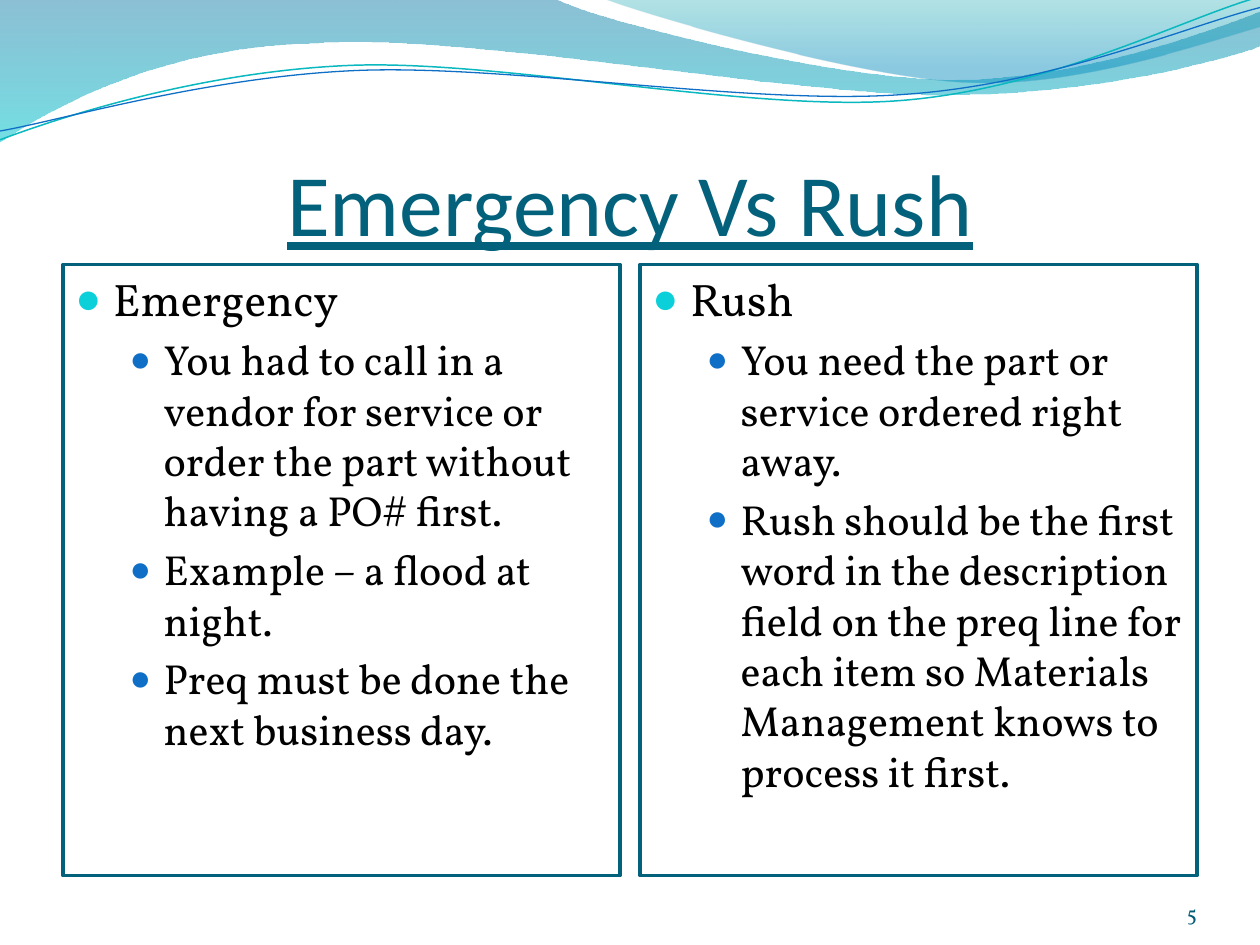
from lxml import etree
from pptx import Presentation
from pptx.dml.color import RGBColor
from pptx.enum.shapes import MSO_SHAPE
from pptx.enum.text import MSO_ANCHOR, PP_ALIGN
from pptx.oxml.ns import qn
from pptx.util import Inches, Pt

RECTANGLE = MSO_SHAPE.RECTANGLE
TOP, BOTTOM = MSO_ANCHOR.TOP, MSO_ANCHOR.BOTTOM
LEFT, CENTER, RIGHT = PP_ALIGN.LEFT, PP_ALIGN.CENTER, PP_ALIGN.RIGHT

DARK_TEAL = RGBColor(0x04, 0x61, 0x7B)
NUMBER_TEAL = RGBColor(0x04, 0x5D, 0x75)
BLACK = RGBColor(0x00, 0x00, 0x00)
CYAN = RGBColor(0x0B, 0xD0, 0xD9)
BLUE = RGBColor(0x0F, 0x6F, 0xC6)
LINE_TEAL = RGBColor(0x0A, 0xB8, 0xBF)
WAVE_BLUE = RGBColor(0x00, 0x74, 0xA1)
WAVE_CYAN = RGBColor(0x00, 0xC6, 0xCF)
CORNER_GREEN = RGBColor(0x00, 0xA1, 0xA9)
CORNER_BLUE = RGBColor(0x00, 0x8B, 0xBF)

HEADING_FONT = "Calibri"
BODY_FONT = "Vollkorn"

# Each segment holds one end point (line) or two controls and an end point (curve).
# Gradient stops: position, colour, opacity in percent.
FILLED_WAVES = [
    ((0, 0),
     [[(4.4, -0.01)],
      [(4.76, 0.17), (6.64, 0.63), (7.58, 0.63)],
      [(8.53, 0.63), (9.58, 0.26), (10, 0.09)],
      [(10.01, 0.36)],
      [(9.83, 0.44), (8.7, 0.76), (7.46, 0.75)],
      [(6.22, 0.75), (3.82, 0.28), (2.57, 0.34)],
      [(1.29, 0.36), (0.46, 0.83), (-0.01, 1.13)]],
     [(0, WAVE_BLUE, 45), (1, WAVE_CYAN, 55)]),
    ((4.79, -0.01),
     [[(5.09, 0.11), (6.82, 0.62), (7.69, 0.65)],
      [(8.56, 0.69), (9.61, 0.32), (10, 0.21)],
      [(10, 0)]],
     [(0, CORNER_GREEN, 30), (0.8, CORNER_BLUE, 45)]),
]
WAVE_LINES = [
    ((0, 1.11),
     [[(0.48, 0.93), (1.58, 0.57), (2.77, 0.52)],
      [(3.95, 0.47), (5.93, 0.89), (7.13, 0.8)],
      [(8.33, 0.71), (9.38, 0.15), (9.98, -0.02)]],
     LINE_TEAL, 0.85),
    ((0, 1.04),
     [[(0.47, 0.96), (1.64, 0.61), (2.83, 0.56)],
      [(4.03, 0.51), (5.97, 0.84), (7.17, 0.75)],
      [(8.36, 0.67), (9.41, 0.21), (10, 0.06)]],
     BLUE, 0.75),
]
COLUMNS = [
    ("Emergency",
     ["You had to call in a vendor for service or order the part without having a PO# first.",
      "Example – a flood at night.",
      "Preq must be done the next business day."]),
    ("Rush",
     ["You need the part or service ordered right away.",
      "Rush should be the first word in the description field on the preq line for each item "
      "so Materials Management knows to process it first."]),
]
# Per level: text size, left margin, hanging indent, bullet colour, bullet size
LEVELS = [(26, 0.3, 0.3, CYAN, 95), (24, 0.7, 0.27, BLUE, 85)]


def add_wave(shapes, start, segments, close):
    """Build a freeform through the end points, then bend its curved segments."""
    builder = shapes.build_freeform(Inches(start[0]), Inches(start[1]))
    ends = [(Inches(segment[-1][0]), Inches(segment[-1][1])) for segment in segments]
    builder.add_line_segments(ends, close=close)
    shape = builder.convert_to_shape()
    shape.shadow.inherit = False
    lines = list(shape._element.spPr.iter(qn("a:lnTo")))
    for line, segment in zip(lines, segments):
        if len(segment) == 3:
            line.tag = qn("a:cubicBezTo")
            for index, (x, y) in enumerate(segment[:2]):
                control = etree.SubElement(line, qn("a:pt"), x=str(Inches(x) - shape.left),
                                           y=str(Inches(y) - shape.top))
                line.insert(index, control)
    return shape


def add_bullet(paragraph, margin, hanging, color, percent):
    properties = paragraph._p.get_or_add_pPr()
    properties.set("marL", str(Inches(margin)))
    properties.set("indent", str(-Inches(hanging)))
    bullet_color = etree.SubElement(properties, qn("a:buClr"))
    etree.SubElement(bullet_color, qn("a:srgbClr"), val=str(color))
    etree.SubElement(properties, qn("a:buSzPct"), val=str(percent * 1000))
    etree.SubElement(properties, qn("a:buFont"), typeface="Arial")
    etree.SubElement(properties, qn("a:buChar"), char="●")


presentation = Presentation()
presentation.slide_width = Inches(10)
presentation.slide_height = Inches(7.5)
slide = presentation.slides.add_slide(presentation.slide_layouts[5])
shapes = slide.shapes

# Wave decoration
for start, segments, stops in FILLED_WAVES:
    wave = add_wave(shapes, start, segments, True)
    wave.line.fill.background()
    wave.fill.gradient()
    wave.fill.gradient_angle = 270
    for stop, (position, color, opacity) in zip(wave.fill.gradient_stops, stops):
        stop.position = position
        stop.color.rgb = color
    stop_colors = wave._element.spPr.iter(qn("a:srgbClr"))
    for stop_color, (position, color, opacity) in zip(stop_colors, stops):
        etree.SubElement(stop_color, qn("a:alpha"), val=str(opacity * 1000))

for start, segments, color, width in WAVE_LINES:
    wave = add_wave(shapes, start, segments, False)
    wave.fill.background()
    wave.line.color.rgb = color
    wave.line.width = Pt(width)

# Title
title = shapes.title
title.left, title.top, title.width, title.height = map(Inches, (0.5, 0.77, 9, 1.25))
frame = title.text_frame
frame.text = "Emergency Vs Rush"
frame.vertical_anchor = BOTTOM
frame.margin_left = frame.margin_right = frame.margin_bottom = 0
frame.margin_top = Inches(0.05)
paragraph = frame.paragraphs[0]
paragraph.alignment = CENTER
paragraph.font.size = Pt(50)
paragraph.font.name = HEADING_FONT
paragraph.font.underline = True
paragraph.font.color.rgb = DARK_TEAL

# Two bordered columns
for index, (heading, points) in enumerate(COLUMNS):
    box = shapes.add_shape(RECTANGLE, Inches(0.5 + index * 4.58), Inches(2.1),
                           Inches(4.42), Inches(4.85))
    box.shadow.inherit = False
    box.fill.background()
    box.line.color.rgb = DARK_TEAL
    box.line.width = Pt(2)
    frame = box.text_frame
    frame.word_wrap = True
    frame.vertical_anchor = TOP
    frame.text = "\n".join([heading, *points])
    for number, paragraph in enumerate(frame.paragraphs):
        level = min(number, 1)
        size, margin, hanging, color, percent = LEVELS[level]
        paragraph.level = level
        paragraph.alignment = LEFT
        add_bullet(paragraph, margin, hanging, color, percent)
        paragraph.space_before = Pt(0.2 * size)
        paragraph.font.size = Pt(size)
        paragraph.font.name = BODY_FONT
        paragraph.font.color.rgb = BLACK

# Slide number
number_box = shapes.add_textbox(Inches(8.67), Inches(6.95), Inches(0.83), Inches(0.4))
frame = number_box.text_frame
frame.word_wrap = True
frame.vertical_anchor = BOTTOM
frame.margin_left = frame.margin_right = frame.margin_top = frame.margin_bottom = 0
frame.text = "5"
paragraph = frame.paragraphs[0]
paragraph.alignment = RIGHT
paragraph.font.size = Pt(12)
paragraph.font.name = BODY_FONT
paragraph.font.color.rgb = NUMBER_TEAL

presentation.save("out.pptx")
